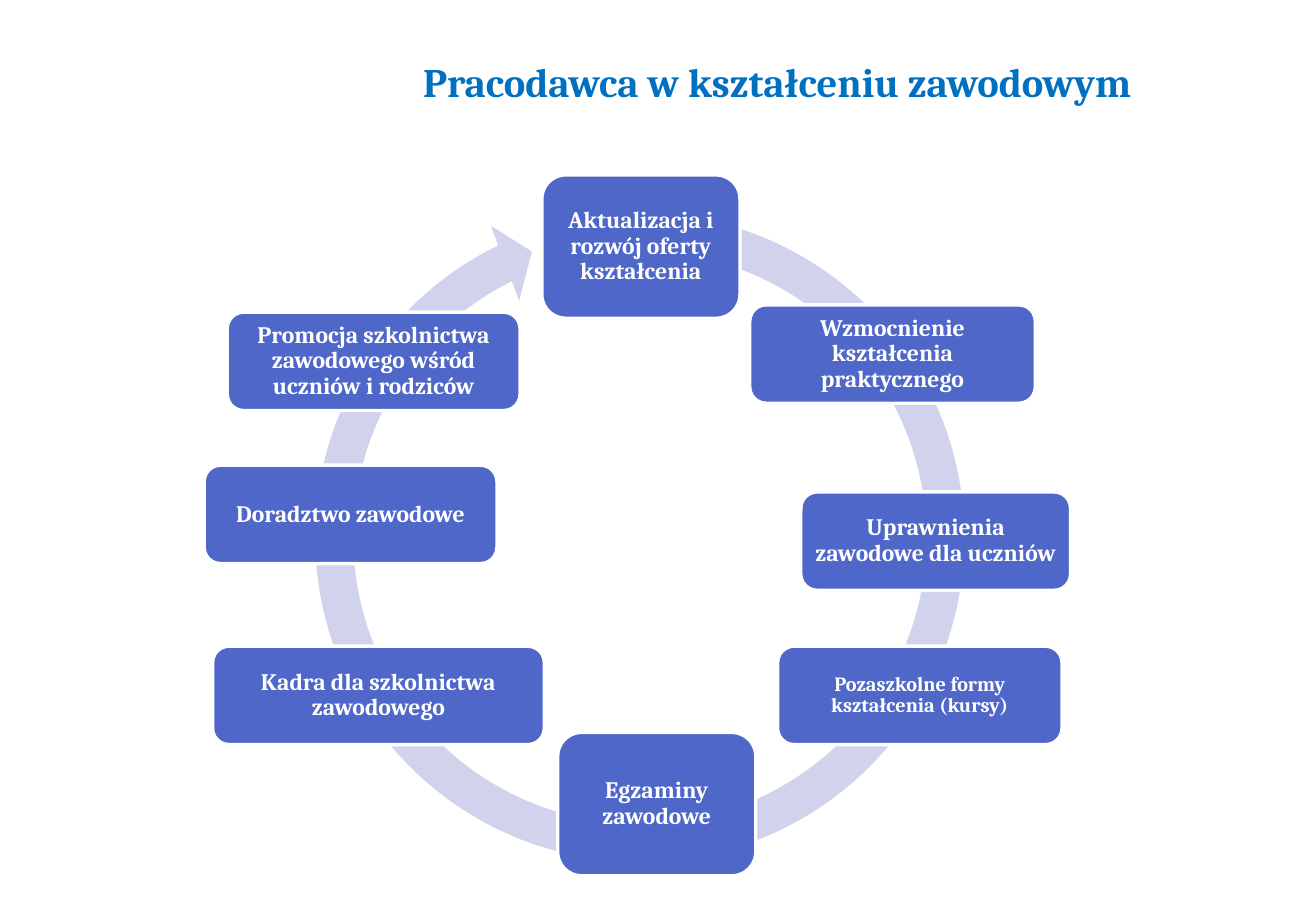
from typing import NamedTuple

from pptx import Presentation
from pptx.dml.color import RGBColor
from pptx.enum.shapes import MSO_SHAPE as Kind
from pptx.enum.text import MSO_ANCHOR as Anchor, PP_ALIGN as Align
from pptx.util import Emu, Pt

PX = 9144  # 100 px to the inch
FONT = "Cambria"
WHITE, BLUE, PALE, TITLE = "FFFFFF", "4E67C8", "D0D3EB", "0070C0"


class Box(NamedTuple):
    left: int
    top: int
    width: int
    height: int


class Step(NamedTuple):
    text: str
    box: Box
    size: int = 14


LOW, TALL = 81, 118

STEPS = [
    Step("Aktualizacja i rozwój oferty kształcenia", Box(446, 144, 163, TALL)),
    Step("Wzmocnienie kształcenia praktycznego", Box(617, 251, 235, LOW)),
    Step("Uprawnienia zawodowe dla uczniów", Box(659, 405, 222, LOW)),
    Step("Pozaszkolne formy kształcenia (kursy)", Box(640, 532, 234, LOW), 12),
    Step("Egzaminy zawodowe", Box(459, 603, 163, TALL)),
    Step("Kadra dla szkolnictwa zawodowego", Box(175, 532, 273, LOW)),
    Step("Doradztwo zawodowe", Box(168, 383, 241, LOW)),
    Step("Promocja szkolnictwa zawodowego wśród uczniów i rodziców",
         Box(187, 257, 241, LOW)),
]


def px(count: int) -> Emu:
    return Emu(count * PX)


def color(code: str) -> RGBColor:
    return RGBColor.from_string(code)


def place(box: Box) -> list[Emu]:
    return [px(n) for n in box]


def write(shape, text: str, *, size: int, ink: str, pad: int,
          lead: float = 1.0) -> None:
    """Fill the shape with one bold, centred paragraph."""
    frame = shape.text_frame
    frame.word_wrap = True
    frame.vertical_anchor = Anchor.MIDDLE
    frame.margin_left = frame.margin_right = px(pad)
    frame.margin_top = frame.margin_bottom = px(pad)
    para = frame.paragraphs[0]
    para.alignment = Align.CENTER
    para.line_spacing = lead
    run = para.add_run()
    run.text = text
    font = run.font
    font.name, font.size, font.bold = FONT, Pt(size), True
    font.color.rgb = color(ink)


def draw(slide, kind: Kind, box: Box, fill: str):
    shape = slide.shapes.add_shape(kind, *place(box))
    shape.shadow.inherit = False
    shape.fill.solid()
    shape.fill.fore_color.rgb = color(fill)
    shape.line.fill.background()
    return shape


def add_ring(slide) -> None:
    ring = draw(slide, Kind.CIRCULAR_ARROW, Box(242, 158, 569, 569), PALE)
    # band width, head angle, end angle, start angle, head width
    for i, value in enumerate((0.055, 3.307, 146.299, 168.852, 0.058)):
        ring.adjustments[i] = value


def add_step(slide, step: Step) -> None:
    card = draw(slide, Kind.ROUNDED_RECTANGLE, step.box, BLUE)
    card.line.color.rgb = color(WHITE)
    card.line.width = Pt(2)
    write(card, step.text, size=step.size, ink=WHITE, pad=6, lead=0.9)


def main() -> None:
    deck = Presentation()
    deck.slide_width, deck.slide_height = px(1083), px(750)
    slide = deck.slides.add_slide(deck.slide_layouts[6])
    head = slide.shapes.add_textbox(*place(Box(212, 16, 855, 102)))
    write(head, "Pracodawca w kształceniu zawodowym", size=24, ink=TITLE, pad=5)
    add_ring(slide)
    for step in STEPS:
        add_step(slide, step)
    deck.save("out.pptx")


if __name__ == "__main__":
    main()
